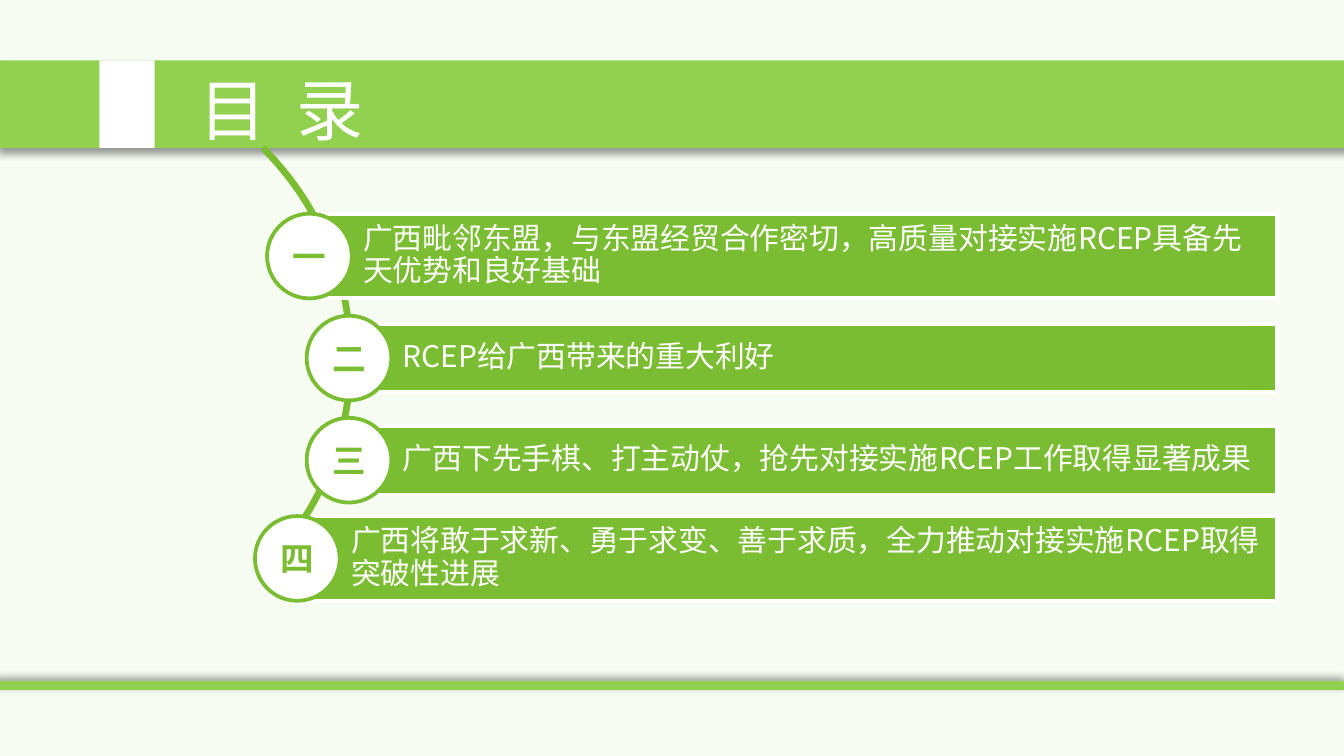
from lxml import etree
from pptx import Presentation
from pptx.dml.color import RGBColor
from pptx.enum.shapes import MSO_CONNECTOR, MSO_SHAPE
from pptx.enum.text import MSO_ANCHOR, PP_ALIGN
from pptx.oxml.ns import qn
from pptx.util import Pt

RECT, OVAL, ARC = MSO_SHAPE.RECTANGLE, MSO_SHAPE.OVAL, MSO_SHAPE.BLOCK_ARC
LINE = MSO_CONNECTOR.STRAIGHT
MID = MSO_ANCHOR.MIDDLE
LEFT, CENTER = PP_ALIGN.LEFT, PP_ALIGN.CENTER

PALE = RGBColor(0xF7, 0xFC, 0xF3)
LIME = RGBColor(0x92, 0xD0, 0x50)
GREEN = RGBColor(0x7A, 0xBC, 0x32)
WHITE = RGBColor(0xFF, 0xFF, 0xFF)

HEAD_FONT = "Noto Sans CJK JP"
BODY_FONT = "Noto Sans CJK SC"

RIGHT = 684.2   # right end of the bars
BADGE = 45.4    # badge diameter

# Number, text, bar left, bar top, bar height
ITEMS = [
    ("一", "广西毗邻东盟，与东盟经贸合作密切，高质量对接实施RCEP具备先天优势和良好基础",
     165.8, 114.5, 45.4),
    ("二", "RCEP给广西带来的重大利好", 187, 173.5, 36.7),
    ("三", "广西下先手棋、打主动仗，抢先对接实施RCEP工作取得显著成果", 187, 228.2, 36.7),
    ("四", "广西将敢于求新、勇于求变、善于求质，全力推动对接实施RCEP取得突破性进展",
     159.3, 276.5, 45.4),
]


class Deck:
    """Holds the style and the current slide."""

    def __init__(self, slide):
        self.slide = slide
        self.shapes = slide.shapes
        back = slide.background.fill
        back.solid()
        back.fore_color.rgb = PALE

    def shape(self, kind, x, y, w, h, fill, line=None):
        item = self.shapes.add_shape(kind, Pt(x), Pt(y), Pt(w), Pt(h))
        item.shadow.inherit = False
        item.fill.solid()
        item.fill.fore_color.rgb = fill
        if line is None:
            item.line.fill.background()
        else:
            item.line.color.rgb = line
            item.line.width = Pt(2)
        return item

    def shade(self, item, angle):
        props = item._element.spPr
        effect = props.find(qn("a:effectLst"))
        if effect is None:
            effect = etree.SubElement(props, qn("a:effectLst"))
        outer = etree.SubElement(effect, qn("a:outerShdw"), blurRad=str(Pt(4)),
                                 dist=str(Pt(3)), dir=str(angle * 60000))
        color = etree.SubElement(outer, qn("a:srgbClr"), val="000000")
        etree.SubElement(color, qn("a:alpha"), val="40000")

    def label(self, item, text, size, font, color, align, pads, bold=False):
        frame = item.text_frame
        frame.text = text
        frame.vertical_anchor = MID
        (frame.margin_left, frame.margin_top,
         frame.margin_right, frame.margin_bottom) = [Pt(pad) for pad in pads]
        para = frame.paragraphs[0]
        para.alignment = align
        run = para.runs[0]
        run.font.size = Pt(size)
        run.font.bold = bold
        run.font.name = font
        run.font.color.rgb = color
        east = etree.SubElement(run._r.get_or_add_rPr(), qn("a:ea"))
        east.set("typeface", font)
        return para

    def rule(self, y):
        item = self.shapes.add_connector(LINE, Pt(-1.4), Pt(y), Pt(721.4), Pt(y))
        item.line.color.rgb = LIME
        item.line.width = Pt(4.5)
        self.shade(item, 225)

    def title(self, text, x, y, w, h):
        item = self.shapes.title
        item.left, item.top, item.width, item.height = Pt(x), Pt(y), Pt(w), Pt(h)
        para = self.label(item, text, 36, HEAD_FONT, WHITE, LEFT,
                          (7.2, 3.6, 7.2, 3.6))
        para.line_spacing = 1.0
        item.text_frame.word_wrap = False
        para.runs[0]._r.get_or_add_rPr().set("spc", "400")
        # Bring the title in front of the band
        item._element.getparent().append(item._element)

    def arc(self, x, y, size):
        item = self.shape(ARC, x, y, size, size, GREEN, GREEN)
        for i, value in enumerate((189, 27, 0.005)):
            item.adjustments[i] = value

    def bar(self, text, x, y, h):
        item = self.shape(RECT, x, y, RIGHT - x, h, GREEN, WHITE)
        para = self.label(item, text, 16, BODY_FONT, WHITE, LEFT,
                          (28.8, 3.6, 3.6, 3.6))
        para.line_spacing = 0.9
        item.text_frame.word_wrap = True

    def badge(self, mark, x, y):
        item = self.shape(OVAL, x - BADGE / 2, y - BADGE / 2, BADGE, BADGE,
                          WHITE, GREEN)
        self.label(item, mark, 18, BODY_FONT, GREEN, CENTER, (0, 0, 0, 0), True)
        item.text_frame.word_wrap = False


def main():
    show = Presentation()
    show.slide_width, show.slide_height = Pt(720), Pt(405)
    deck = Deck(show.slides.add_slide(show.slide_layouts[5]))

    # Header band, white tab and bottom rule
    band = deck.shape(RECT, -0.7, 32.4, 723.6, 46.8, LIME)
    deck.shade(band, 90)
    deck.shape(RECT, 53.3, 32.4, 29.5, 46.8, WHITE)
    deck.rule(367.2)
    deck.title("目 录", 99.4, 32.4, 109.4, 51.1)

    # The last bar lies behind the arc, the others in front
    *front, last = ITEMS
    deck.bar(*last[1:])
    deck.arc(-131, 32.4, 319.7)
    for item in front:
        deck.bar(*item[1:])

    # Badges sit on the left end of each bar
    for mark, _, x, y, h in ITEMS:
        deck.badge(mark, x, y + h / 2)

    show.save("out.pptx")


if __name__ == "__main__":
    main()
